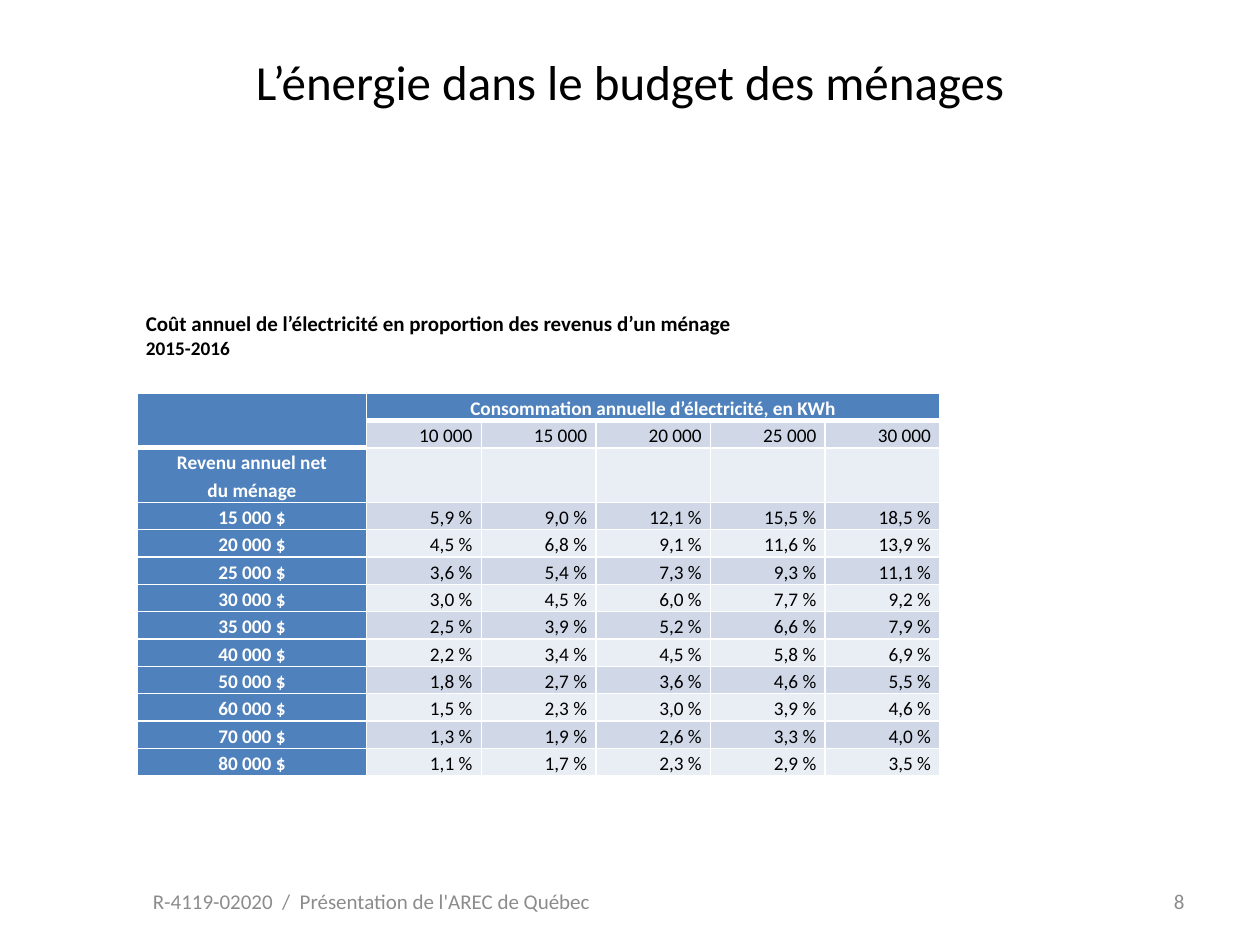
from lxml.etree import SubElement
from pptx import Presentation
from pptx.dml.color import RGBColor
from pptx.enum.text import MSO_ANCHOR, PP_ALIGN
from pptx.oxml.ns import qn
from pptx.util import Inches, Pt

WHITE, BLACK, GREY = "FFFFFF", "000000", "8C8C8C"
BLUE, BAND_DARK, BAND_LIGHT = "4F81BD", "D0D8E8", "E9EDF4"

TITLE = "L’énergie dans le budget des ménages"
FOOTER = "R-4119-02020  /  Présentation de l'AREC de Québec"
CAPTION = "Coût annuel de l’électricité en proportion des revenus d’un ménage"
USAGE_HEADER = "Consommation annuelle d’électricité, en KWh"
INCOME_HEADER = "Revenu annuel net\ndu ménage"
USAGES = ["10 000", "15 000", "20 000", "25 000", "30 000"]
COST_SHARES = {
    "15 000 $": "5,9 9,0 12,1 15,5 18,5",
    "20 000 $": "4,5 6,8 9,1 11,6 13,9",
    "25 000 $": "3,6 5,4 7,3 9,3 11,1",
    "30 000 $": "3,0 4,5 6,0 7,7 9,2",
    "35 000 $": "2,5 3,9 5,2 6,6 7,9",
    "40 000 $": "2,2 3,4 4,5 5,8 6,9",
    "50 000 $": "1,8 2,7 3,6 4,6 5,5",
    "60 000 $": "1,5 2,3 3,0 3,9 4,6",
    "70 000 $": "1,3 1,9 2,6 3,3 4,0",
    "80 000 $": "1,1 1,7 2,3 2,9 3,5",
}


def rgb(color):
    return RGBColor.from_string(color)


def table_rows():
    blank = [""] * len(USAGES)
    rows = [["", USAGE_HEADER] + blank[1:], [""] + USAGES, [INCOME_HEADER] + blank]
    for income, shares in COST_SHARES.items():
        rows.append([income] + [f"{share} %" for share in shares.split()])
    return rows


class SlideBuilder:
    font = "Calibri"
    cell_size = 11
    row_height = 0.16
    cell_margins = {"margin_left": 0.07, "margin_right": 0.07,
                    "margin_top": 0, "margin_bottom": 0}

    def __init__(self, slide):
        self.s = slide

    def fill_text(self, tf, lines, align, color, bold=False, spacing=None):
        """Fill a text frame with (text, size) lines, one paragraph each."""
        for i, (text, size) in enumerate(lines):
            p = tf.add_paragraph() if i else tf.paragraphs[0]
            p.alignment = align
            p.line_spacing = spacing
            if not text:
                # Keeps an empty cell from taking the default 18 pt height
                SubElement(p._p, qn("a:endParaRPr"), sz=str(size * 100))
                continue
            r = p.add_run()
            r.text = text
            style = {"name": self.font, "size": Pt(size), "bold": bold}
            for name, value in style.items():
                setattr(r.font, name, value)
            r.font.color.rgb = rgb(color)

    def title(self, text, box, size):
        sp = self.s.shapes.title
        for name, value in zip(("left", "top", "width", "height"), box):
            setattr(sp, name, Inches(value))
        sp.text_frame.vertical_anchor = MSO_ANCHOR.MIDDLE
        self.fill_text(sp.text_frame, [(text, size)], PP_ALIGN.CENTER, BLACK)

    def text(self, lines, box, align, color, bold=False):
        tf = self.s.shapes.add_textbox(*map(Inches, box)).text_frame
        tf.word_wrap = True
        tf.vertical_anchor = MSO_ANCHOR.MIDDLE
        self.fill_text(tf, lines, align, color, bold)

    def borders(self, cell, widths):
        tc_pr = cell._tc.get_or_add_tcPr()
        for side, width in widths.items():
            ln = SubElement(tc_pr, qn(f"a:ln{side}"), w=str(Pt(width)))
            fill = SubElement(ln, qn("a:solidFill"))
            SubElement(fill, qn("a:srgbClr"), val=WHITE)

    def cell(self, cell, text, row, col):
        header = row == 0 or col == 0
        for name, value in self.cell_margins.items():
            setattr(cell, name, Inches(value))
        thick = row == 0 or (row == 1 and col == 0)
        widths = {"L": 1, "R": 1, "T": 1, "B": 3 if thick else 1}
        if row:
            del widths["T"]
        self.borders(cell, widths)
        cell.fill.solid()
        band = BAND_DARK if row % 2 else BAND_LIGHT
        cell.fill.fore_color.rgb = rgb(BLUE if header else band)
        lines = [(line, self.cell_size) for line in text.split("\n")]
        self.fill_text(cell.text_frame, lines,
                       PP_ALIGN.CENTER if header else PP_ALIGN.RIGHT,
                       WHITE if header else BLACK, header, 1.15)

    def table(self, rows, left, top, col_widths):
        table = self.s.shapes.add_table(
            len(rows), len(col_widths), Inches(left), Inches(top),
            Inches(sum(col_widths)), Inches(self.row_height * len(rows))).table
        for column, width in zip(table.columns, col_widths):
            column.width = Inches(width)
        for i, row in enumerate(rows):
            table.rows[i].height = Inches(self.row_height)
            for j, text in enumerate(row):
                self.cell(table.cell(i, j), text, i, j)
        return table


def main():
    prs = Presentation()
    prs.slide_width, prs.slide_height = Inches(10), Inches(7.5)
    slide = SlideBuilder(prs.slides.add_slide(prs.slide_layouts[5]))

    slide.title(TITLE, (0.5, 0.3, 9, 0.69), 28)
    table = slide.table(table_rows(), 1.09, 3.12, [1.82] + [0.91] * len(USAGES))
    table.rows[2].height = Inches(0.34)
    table.cell(0, 0).merge(table.cell(1, 0))
    table.cell(0, 1).merge(table.cell(0, len(USAGES)))

    slide.text([(FOOTER, 12)], (1.06, 6.95, 3.78, 0.4), PP_ALIGN.CENTER, GREY)
    slide.text([("8", 12)], (7.17, 6.95, 2.33, 0.4), PP_ALIGN.RIGHT, GREY)
    slide.text([(CAPTION, 12), ("2015-2016", 11)], (1.06, 2.41, 6.77, 0.5),
               PP_ALIGN.JUSTIFY, BLACK, bold=True)
    prs.save("out.pptx")


if __name__ == "__main__":
    main()
